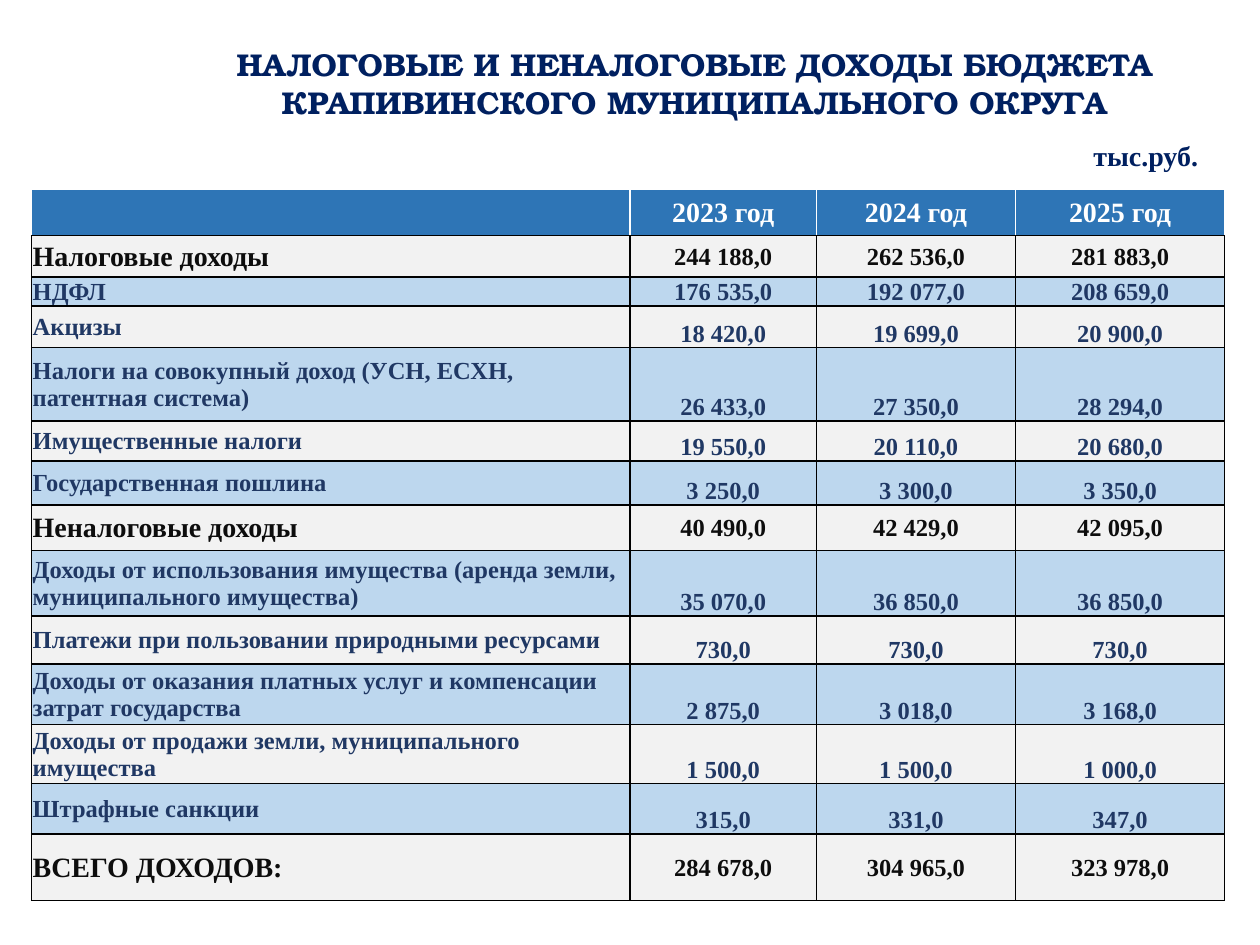
from lxml.etree import SubElement
from pptx import Presentation
from pptx.dml.color import RGBColor
from pptx.enum.shapes import MSO_SHAPE
from pptx.enum.text import MSO_ANCHOR, PP_ALIGN
from pptx.oxml.ns import qn
from pptx.util import Inches, Pt

SERIF = "Times New Roman"
NAVY, INK, BLUE_INK = "002060", "0D0D0D", "203864"
HEADER, GREY, LIGHT_BLUE = "2E75B6", "F2F2F2", "BDD7EE"
WHITE, BLACK = "FFFFFF", "000000"

COLUMNS = [4.75, 1.48, 1.58, 1.66]
YEARS = ["", "2023 год", "2024 год", "2025 год"]
HEADER_HEIGHT = 0.37
# Row height, then the label and the three yearly amounts
INCOME = [
    (0.33, "Налоговые доходы", "244 188,0", "262 536,0", "281 883,0"),
    (0.23, "НДФЛ", "176 535,0", "192 077,0", "208 659,0"),
    (0.33, "Акцизы", "18 420,0", "19 699,0", "20 900,0"),
    (0.58, "Налоги на совокупный доход (УСН, ЕСХН, патентная система)",
     "26 433,0", "27 350,0", "28 294,0"),
    (0.32, "Имущественные налоги", "19 550,0", "20 110,0", "20 680,0"),
    (0.35, "Государственная пошлина", "3 250,0", "3 300,0", "3 350,0"),
    (0.36, "Неналоговые доходы", "40 490,0", "42 429,0", "42 095,0"),
    (0.52, "Доходы от использования имущества (аренда земли, муниципального имущества)",
     "35 070,0", "36 850,0", "36 850,0"),
    (0.38, "Платежи при пользовании природными ресурсами", "730,0", "730,0", "730,0"),
    (0.48, "Доходы от оказания платных услуг и компенсации затрат государства",
     "2 875,0", "3 018,0", "3 168,0"),
    (0.47, "Доходы от продажи земли, муниципального имущества",
     "1 500,0", "1 500,0", "1 000,0"),
    (0.4, "Штрафные санкции", "315,0", "331,0", "347,0"),
    (0.53, "ВСЕГО ДОХОДОВ:", "284 678,0", "304 965,0", "323 978,0"),
]
TOTALS = {"Налоговые доходы", "Неналоговые доходы", "ВСЕГО ДОХОДОВ:"}


def rgb(color):
    return RGBColor.from_string(color)


def set_text(tf, text, size, color, font=SERIF, align=PP_ALIGN.CENTER):
    tf.word_wrap = True
    p = tf.paragraphs[0]
    p.text = text
    p.alignment = align
    p.font.name, p.font.size, p.font.bold = font, Pt(size), True
    p.font.color.rgb = rgb(color)


def set_borders(cell, left, right, top, bottom):
    tc_pr = cell._tc.get_or_add_tcPr()
    for side, color in zip("LRTB", (left, right, top, bottom)):
        ln = SubElement(tc_pr, qn(f"a:ln{side}"), w=str(Pt(1)))
        fill = SubElement(ln, qn("a:solidFill"))
        SubElement(fill, qn("a:srgbClr"), val=color)


def fill_cell(cell, text, size, color, fill, borders, align, anchor):
    set_borders(cell, *borders)
    cell.fill.solid()
    cell.fill.fore_color.rgb = rgb(fill)
    cell.margin_left = cell.margin_right = cell.margin_top = Inches(0.01)
    cell.margin_bottom = 0
    cell.vertical_anchor = anchor
    if text:
        set_text(cell.text_frame, text, size, color, align=align)


def add_income_table(s):
    heights = [HEADER_HEIGHT] + [row[0] for row in INCOME]
    table = s.shapes.add_table(len(heights), len(COLUMNS), Inches(0.25), Inches(1.5),
                               Inches(sum(COLUMNS)), Inches(sum(heights))).table
    for column, width in zip(table.columns, COLUMNS):
        column.width = Inches(width)
    for row, height in zip(table.rows, heights):
        row.height = Inches(height)

    for c, year in enumerate(YEARS):
        fill_cell(table.cell(0, c), year, 16, WHITE, HEADER,
                  (WHITE, WHITE, WHITE, BLACK), PP_ALIGN.CENTER, MSO_ANCHOR.MIDDLE)

    for r, (_, *values) in enumerate(INCOME, start=1):
        total = values[0] in TOTALS
        fill = GREY if r % 2 else LIGHT_BLUE
        for c, value in enumerate(values):
            label = c == 0
            fill_cell(table.cell(r, c), value, 16 if total and label else 14,
                      INK if total else BLUE_INK, fill, [BLACK] * 4,
                      PP_ALIGN.LEFT if label else PP_ALIGN.CENTER,
                      MSO_ANCHOR.MIDDLE if total or label else MSO_ANCHOR.BOTTOM)


def add_title(s):
    tf = s.shapes.add_textbox(Inches(1.77), 0, Inches(7.48), Inches(1.01)).text_frame
    tf.vertical_anchor = MSO_ANCHOR.BOTTOM
    set_text(tf, "НАЛОГОВЫЕ И НЕНАЛОГОВЫЕ ДОХОДЫ БЮДЖЕТА КРАПИВИНСКОГО "
             "МУНИЦИПАЛЬНОГО ОКРУГА", 18, NAVY, "TeX Gyre Bonum")


def add_unit_label(s):
    sp = s.shapes.add_shape(MSO_SHAPE.RECTANGLE, Inches(8.58), Inches(1.06),
                            Inches(1.08), Inches(0.35))
    sp.shadow.inherit = False
    sp.fill.solid()
    sp.fill.fore_color.rgb = rgb(WHITE)
    sp.line.fill.background()
    sp.text_frame.vertical_anchor = MSO_ANCHOR.MIDDLE
    set_text(sp.text_frame, "тыс.руб.", 16, NAVY, align=PP_ALIGN.LEFT)


def main():
    prs = Presentation()
    prs.slide_width, prs.slide_height = Inches(10), Inches(7.5)
    s = prs.slides.add_slide(prs.slide_layouts[6])
    add_income_table(s)
    add_title(s)
    add_unit_label(s)
    prs.save("out.pptx")


if __name__ == "__main__":
    main()
